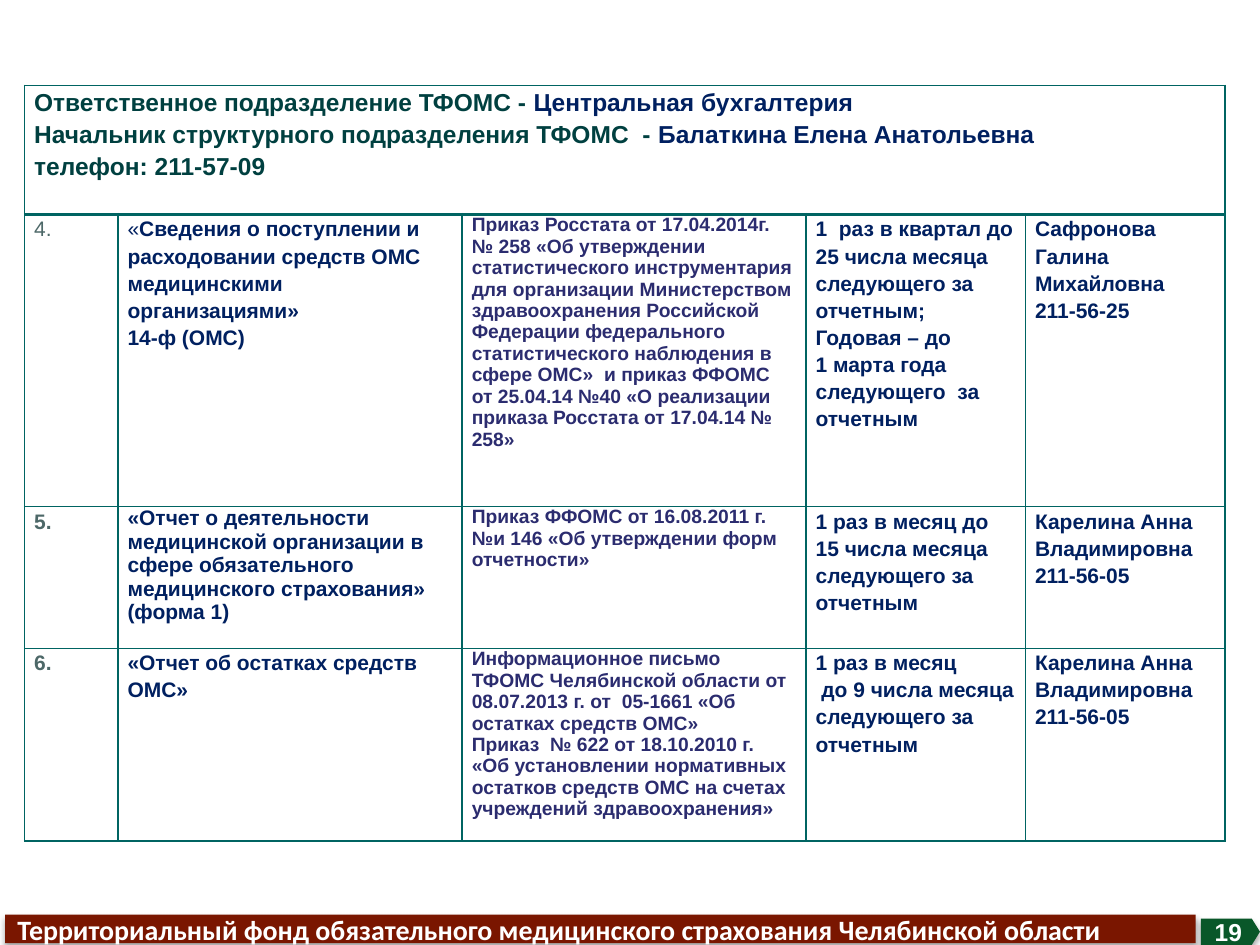
from lxml import etree
from pptx import Presentation
from pptx.dml.color import RGBColor
from pptx.enum.shapes import MSO_SHAPE
from pptx.enum.text import MSO_ANCHOR, PP_ALIGN
from pptx.oxml import parse_xml
from pptx.oxml.ns import nsdecls
from pptx.util import Pt

RECT, ARROW = MSO_SHAPE.RECTANGLE, MSO_SHAPE.PENTAGON
MIDDLE, LEFT, CENTER = MSO_ANCHOR.MIDDLE, PP_ALIGN.LEFT, PP_ALIGN.CENTER
INK = {"label": "004040", "navy": "002060", "violet": "2B2C6F", "gray": "4D6868",
       "line": "006462", "bar": "7A1600", "page": "095729", "white": "FFFFFF"}


def style(font, size, ink, name="Arial", bold=True):
    font.name, font.size, font.bold = name, Pt(size), bold
    font.color.rgb = RGBColor.from_string(INK[ink])


def frame(cell, top, base):
    """Set margins, borders and an empty fill; top and base are line widths."""
    cell.margin_left = cell.margin_right = Pt(5.5)
    cell.margin_top = cell.margin_bottom = 0
    props = cell._tc.get_or_add_tcPr()
    for side, width in zip("LRTB", (1, 1, top, base)):
        line = etree.SubElement(props, f"{{{props.nsmap['a']}}}ln{side}", w=str(Pt(width)))
        line.append(parse_xml(f'<a:solidFill {nsdecls("a")}><a:srgbClr val="{INK["line"]}"/>'
                              '</a:solidFill>'))
    cell.fill.background()


prs = Presentation()
prs.slide_width, prs.slide_height = Pt(720), Pt(540)
slide = prs.slides.add_slide(prs.slide_layouts[6])

widths = [53.4, 196.7, 196.5, 125.4, 114]
heights = [73.7, 167, 81, 110]
head = [
    [("Ответственное подразделение ТФОМС - ", "label"), ("Центральная бухгалтерия", "navy")],
    [("Начальник структурного подразделения ТФОМС  - ", "label"),
     ("Балаткина Елена Анатольевна", "navy")],
    [("телефон: 211-57-09", "label")],
]
rows = [
    [["4."],
     ["«Сведения о поступлении и расходовании средств ОМС медицинскими организациями»",
      "14-ф (ОМС)"],
     ["Приказ Росстата от 17.04.2014г. № 258 «Об утверждении статистического инструментария "
      "для организации Министерством здравоохранения Российской Федерации федерального "
      "статистического наблюдения в сфере ОМС»  и приказ ФФОМС от 25.04.14 №40 "
      "«О реализации приказа Росстата от 17.04.14 № 258»"],
     ["1  раз в квартал до 25 числа месяца следующего за отчетным;", "Годовая – до",
      "1 марта года следующего  за отчетным"],
     ["Сафронова", "Галина", "Михайловна", "211-56-25"]],
    [["5."],
     ["«Отчет о деятельности медицинской организации в сфере обязательного медицинского "
      "страхования»  (форма 1)"],
     ["Приказ ФФОМС от 16.08.2011 г. №и 146 «Об утверждении форм отчетности»"],
     ["1 раз в месяц до 15 числа месяца следующего за отчетным"],
     ["Карелина Анна Владимировна", "211-56-05"]],
    [["6."],
     ["«Отчет об остатках средств ОМС»"],
     ["Информационное письмо ТФОМС Челябинской области от 08.07.2013 г. от  05-1661 "
      "«Об остатках средств ОМС»",
      "Приказ  № 622 от 18.10.2010 г. «Об установлении нормативных остатков средств ОМС "
      "на счетах учреждений здравоохранения»"],
     ["1 раз в месяц", " до 9 числа месяца следующего за отчетным"],
     ["Карелина Анна Владимировна", "211-56-05"]],
]
looks = [(12, "gray", 1.15), (12, "navy", 1.15), (11, "violet", 1),
         (12, "navy", 1.15), (12, "navy", 1.15)]

# Table
table = slide.shapes.add_table(len(heights), len(widths), Pt(14), Pt(48.8),
                               Pt(sum(widths)), Pt(sum(heights))).table
table.first_row = table.horz_banding = False
for col, width in zip(table.columns, widths):
    col.width = Pt(width)
for row, height in zip(table.rows, heights):
    row.height = Pt(height)

title = table.cell(0, 0)
title.merge(table.cell(0, len(widths) - 1))
for cell in table.rows[0].cells:
    frame(cell, 1, 2)
for i, parts in enumerate(head):
    para = title.text_frame.paragraphs[0] if i == 0 else title.text_frame.add_paragraph()
    para.line_spacing = 1.15
    for text, ink in parts:
        run = para.add_run()
        run.text = text
        style(run.font, 14, ink)

for r, row in enumerate(rows, 1):
    for c, (lines, (size, ink, gap)) in enumerate(zip(row, looks)):
        cell = table.cell(r, c)
        frame(cell, 2 if r == 1 else 1, 1)
        cell.text_frame.text = "\n".join(lines)
        for para in cell.text_frame.paragraphs:
            para.line_spacing = 1 if (r, c) == (2, 1) else gap
            style(para.font, size, ink, bold=(r, c) != (1, 0))

# The opening quote of report 4 is not bold
para = table.cell(1, 1).text_frame.paragraphs[0]
quote = para.runs[0]
rest = para.add_run()
quote.text, rest.text = quote.text[0], quote.text[1:]
quote.font.bold = False

# Footer bar and page number
for kind, box, fill, text, size, name, align in [
    (RECT, (2.9, 522.7, 680.4, 16.2), "bar",
     "Территориальный фонд обязательного медицинского страхования Челябинской области",
     16, "Calibri", LEFT),
    (ARROW, (686.2, 524.9, 33.8, 15.1), "page", "19", 14, "Arial", CENTER),
]:
    shape = slide.shapes.add_shape(kind, *map(Pt, box))
    if kind == ARROW:
        shape.adjustments[0] = 0.31
    shape.fill.solid()
    shape.fill.fore_color.rgb = RGBColor.from_string(INK[fill])
    shape.line.fill.background()
    shape.shadow.inherit = False
    shape._element.spPr.find("{*}effectLst").append(parse_xml(
        f'<a:outerShdw {nsdecls("a")} blurRad="{Pt(3.5)}" dist="{Pt(2.2)}" dir="5400000" '
        'rotWithShape="0"><a:srgbClr val="000000"><a:alpha val="32000"/></a:srgbClr>'
        '</a:outerShdw>'))
    body = shape.text_frame
    body.word_wrap, body.vertical_anchor, body.text = True, MIDDLE, text
    body.paragraphs[0].alignment = align
    style(body.paragraphs[0].font, size, "white", name)

prs.save("out.pptx")
